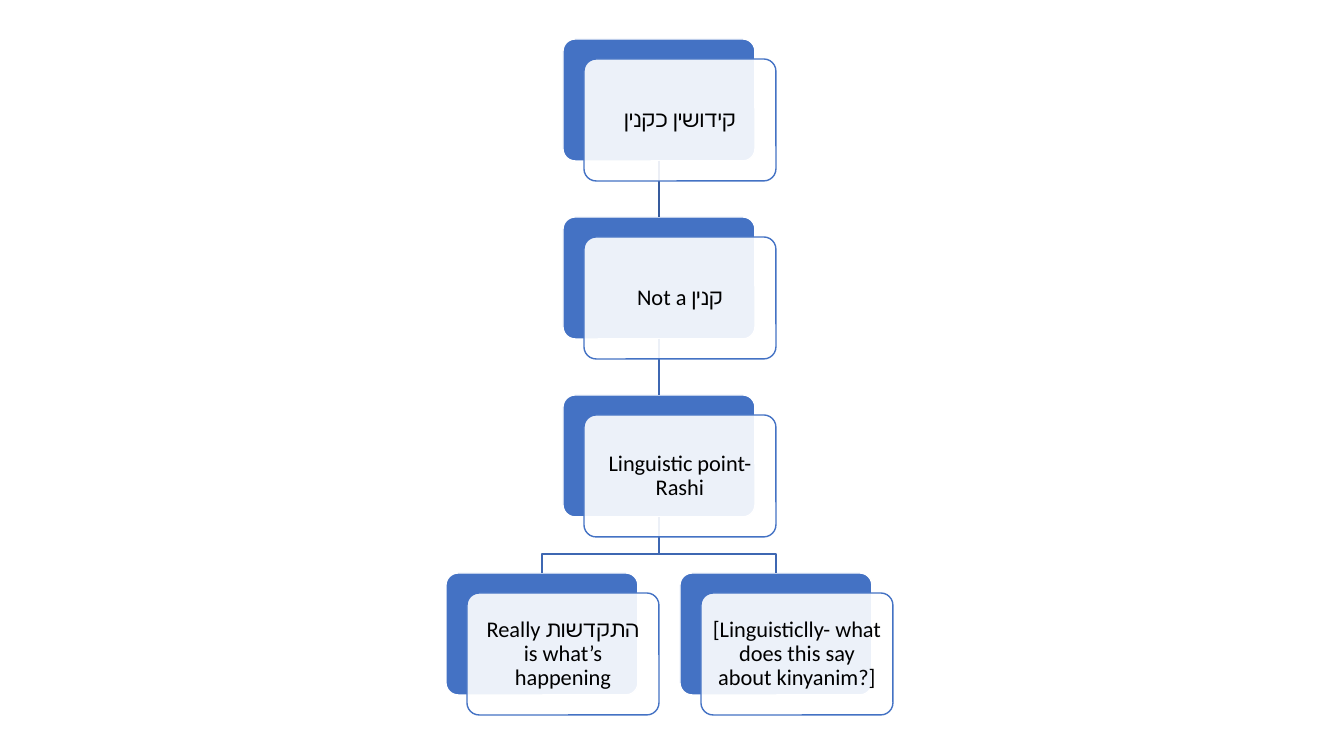
from dataclasses import dataclass

import pptx
import pptx.dml.color
import pptx.enum.shapes
import pptx.enum.text
import pptx.oxml.ns
import pptx.util
from lxml import etree

EMU_PER_PX = 914400 / 100.8
TOP, BOTTOM = 0, 2
CARD_W, CARD_H = 192, 122
SHIFT_X, SHIFT_Y = 21, 20
AXIS_X, FIRST_TOP, ROW_PITCH = 659, 39, 178
BRANCH_X, BRANCH_BEND = 117, 37


@dataclass(frozen=True)
class Theme:
    accent: str = "4472C4"
    root_link: str = "365B9D"
    child_link: str = "3E67B2"
    paper: str = "FFFFFF"
    ink: str = "000000"
    font: str = "Calibri"
    text_pt: int = 16
    line_pt: int = 1
    front_opacity: int = 90
    corner: float = 0.1
    padding: int = 7


def px(length):
    return pptx.util.Emu(round(length * EMU_PER_PX))


def rgb(colour):
    return pptx.dml.color.RGBColor.from_string(colour)


class Chart:
    """Draws hierarchy elements on one slide in one theme."""

    def __init__(self, page, theme):
        self.page = page
        self.theme = theme

    def outline(self, shape, colour):
        shape.line.color.rgb = rgb(colour)
        shape.line.width = pptx.util.Pt(self.theme.line_pt)

    def card(self, left, top, fill, line):
        box = self.page.shapes.add_shape(
            pptx.enum.shapes.MSO_SHAPE.ROUNDED_RECTANGLE,
            px(left), px(top), px(CARD_W), px(CARD_H))
        box.adjustments[0] = self.theme.corner
        box.shadow.inherit = False
        box.fill.solid()
        box.fill.fore_color.rgb = rgb(fill)
        self.outline(box, line)
        return box

    def back_card(self, left, top):
        return self.card(left, top, self.theme.accent, self.theme.paper)

    def front_card(self, left, top, text):
        theme = self.theme
        box = self.card(left + SHIFT_X, top + SHIFT_Y, theme.paper, theme.accent)
        colour = box.fill._xPr.find(".//" + pptx.oxml.ns.qn("a:srgbClr"))
        alpha = etree.SubElement(colour, pptx.oxml.ns.qn("a:alpha"))
        alpha.set("val", str(theme.front_opacity * 1000))

        frame = box.text_frame
        frame.word_wrap = True
        frame.vertical_anchor = pptx.enum.text.MSO_ANCHOR.MIDDLE
        frame.margin_left = frame.margin_right = px(theme.padding)
        frame.margin_top = frame.margin_bottom = px(theme.padding)
        para = frame.paragraphs[0]
        para.text = text
        para.alignment = pptx.enum.text.PP_ALIGN.CENTER
        para.line_spacing = 0.9
        para.font.name = theme.font
        para.font.size = pptx.util.Pt(theme.text_pt)
        para.font.color.rgb = rgb(theme.ink)

    def link(self, parent, child, colour):
        """Join the bottom of one card to the top of the next."""
        line = self.page.shapes.add_connector(
            pptx.enum.shapes.MSO_CONNECTOR.STRAIGHT, 0, 0, 0, 0)
        line.begin_connect(parent, BOTTOM)
        line.end_connect(child, TOP)
        self.outline(line, colour)
        etree.SubElement(line._element.spPr, pptx.oxml.ns.qn("a:effectLst"))

    def branch(self, top, end_x, end_y, colour):
        """Draw a right-angled line from the axis to an off-axis card."""
        bend_y = top + BRANCH_BEND
        builder = self.page.shapes.build_freeform(AXIS_X, top, scale=EMU_PER_PX)
        builder.add_line_segments(
            [(AXIS_X, bend_y), (end_x, bend_y), (end_x, end_y)], close=False)
        line = builder.convert_to_shape()
        line.shadow.inherit = False
        line.fill.background()
        self.outline(line, colour)


def main():
    deck = pptx.Presentation()
    deck.slide_width, deck.slide_height = px(1344), px(756)
    page = deck.slides.add_slide(deck.slide_layouts[6])
    theme = Theme()
    chart = Chart(page, theme)

    # Each topic: text, row, horizontal distance of its centre from the axis
    topics = [
        ("קידושין כקנין", 0, 0),
        ("Not a קנין", 1, 0),
        ("Linguistic point- Rashi", 2, 0),
        ("Really התקדשות is what’s happening", 3, -BRANCH_X),
        ("[Linguisticlly- what does this say about kinyanim?]", 3, BRANCH_X),
    ]
    places = [(AXIS_X + offset - CARD_W // 2, FIRST_TOP + row * ROW_PITCH)
              for _, row, offset in topics]

    backs = [chart.back_card(left, top) for left, top in places]
    root, denial, point = backs[:3]
    chart.link(root, denial, theme.root_link)
    chart.link(denial, point, theme.child_link)
    point_bottom = places[2][1] + CARD_H
    for left, top in places[3:]:
        chart.branch(point_bottom, left + CARD_W // 2, top, theme.child_link)
    for (text, _, _), (left, top) in zip(topics, places):
        chart.front_card(left, top, text)

    deck.save("out.pptx")


if __name__ == "__main__":
    main()
